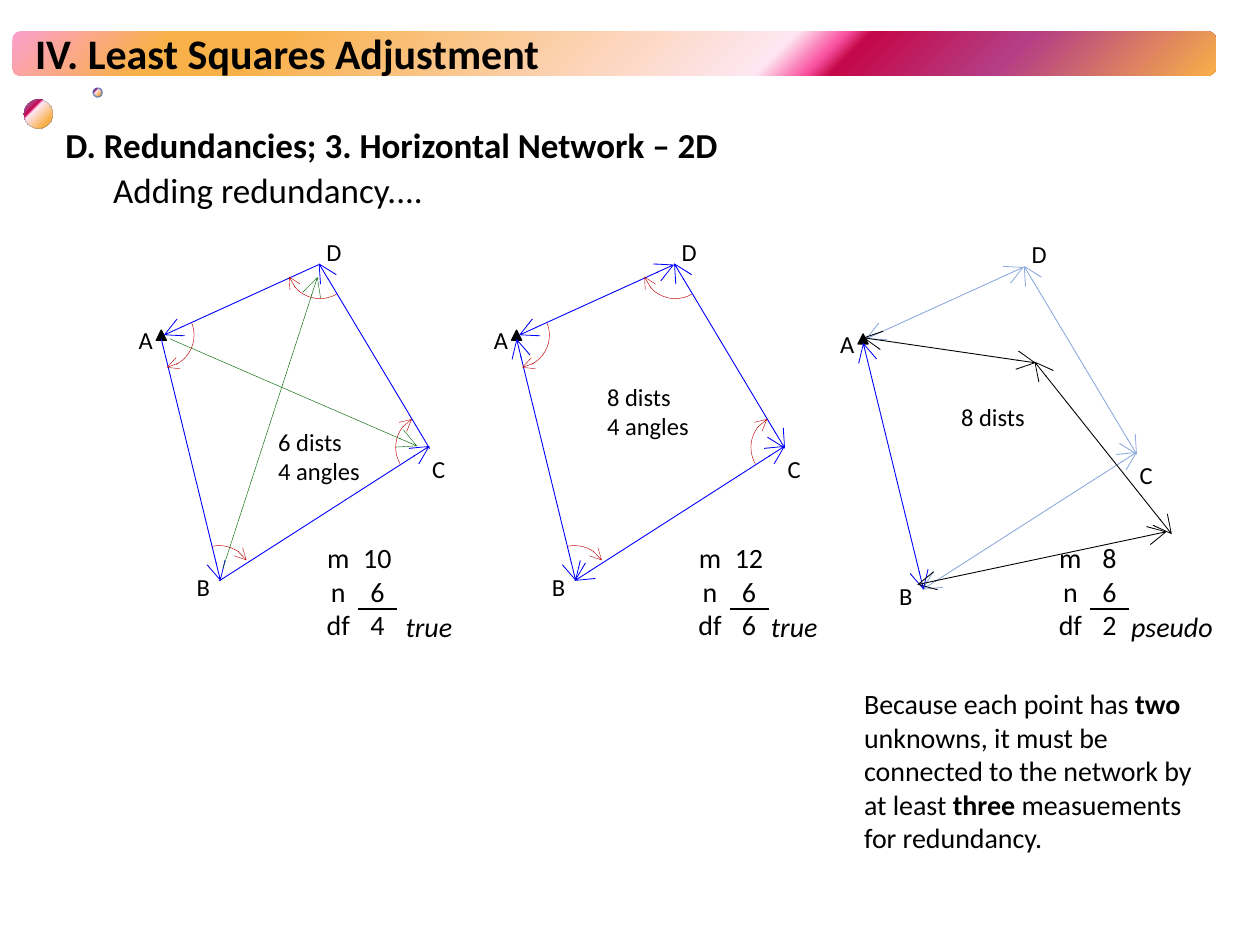
from lxml.etree import SubElement
from pptx import Presentation
from pptx.dml.color import RGBColor
from pptx.enum.shapes import MSO_CONNECTOR, MSO_SHAPE
from pptx.enum.text import MSO_ANCHOR, MSO_AUTO_SIZE, PP_ALIGN
from pptx.oxml import parse_xml
from pptx.oxml.ns import nsdecls, qn
from pptx.util import Inches, Pt

COLS, ROWS = 100, 75
WIDTH, HEIGHT = Inches(10), Inches(7.5)
COLORS = {
    "ink": "000000", "side": "0000FF", "faded": "8FAADC", "angle": "C00000",
    "diagonal": "006600", "rim": "3B6BC1",
}
STOPS = [(0, "FC9FCB"), (13, "F8B049"), (21, "F8B049"), (63, "FEE7F2"),
         (67, "F952A0"), (69, "C50849"), (82, "B43E85"), (100, "F8B049")]
LINEAR = '<a:lin ang="2700000" scaled="0"/>'
RADIAL = '<a:path path="circle"><a:fillToRect l="100000" t="100000"/></a:path>'
NO_STYLE = "{2D5ABB26-0587-4C30-8999-92F81FD0307C}"
BODY = {"line_spacing": 0.9, "space_before": Pt(7.5)}
SUB = {"line_spacing": 0.9, "space_before": Pt(3.8), "level": 1}
TIGHT = {f"margin_{side}": 0 for side in ("left", "top", "right", "bottom")}

SIDES = [(0.6, 0.4, 12.9, -5.2), (12.9, -5.3, 21.7, 9.4),
         (21.7, 9.2, 5, 19.9), (5.1, 19.9, 0.4, 0.7)]
DIAGONALS = [(1.1, 0.7, 20.7, 9.2), (5.3, 18.9, 12.8, -4.2)]
SHIFTED = [(68.5, 26.8, 82.2, 28.8), (82.1, 28.7, 93, 42.4), (92.6, 42.2, 72.8, 46.4)]
LABELS = [("A", -1.4, -0.4), ("B", 3.2, 19.2), ("D", 13.5, -7.4), ("C", 21.9, 9.8)]
ANGLES = [(19, 6.7, 150.07, 239.79), (10.4, -7.7, 59.74, 160.79),
          (2.4, 17.1, 257.65, 326.56), (-2.2, -2.2, 338.37, 80.17)]


def grid(*cells):
    """Turn alternating column and row counts into slide lengths."""
    steps = (WIDTH / COLS, HEIGHT / ROWS)
    return [round(n * steps[i % 2]) for i, n in enumerate(cells)]


def rgb(name):
    """Look up a named colour."""
    return RGBColor.from_string(COLORS[name])


def apply(obj, values):
    """Set each attribute from a dict of format values."""
    for name, value in values.items():
        setattr(obj, name, value)


def add_run(p, text, size, **fmt):
    """Add a run of text with its font."""
    r = p.add_run()
    r.text = text
    apply(r.font, {"name": "Calibri", "size": Pt(size), **fmt})
    r.font.color.rgb = rgb("ink")


def add_text(shapes, at, paragraphs, size, wrap=False, frame=None):
    """Add a text box; a paragraph is its format and a list of runs."""
    tf = shapes.add_textbox(*grid(*at)).text_frame
    apply(tf, {"word_wrap": wrap, "auto_size": MSO_AUTO_SIZE.SHAPE_TO_FIT_TEXT,
               **(frame or {})})
    for i, (fmt, runs) in enumerate(paragraphs):
        p = tf.add_paragraph() if i else tf.paragraphs[0]
        apply(p, fmt)
        for text, font in runs:
            add_run(p, text, size, **font)
    return tf


def add_gradient(shapes, kind, at, shade, rim=0):
    """Add a banner or bullet with the theme gradient."""
    sp = shapes.add_shape(kind, *grid(*at))
    sp.shadow.inherit = False
    stops = "".join(f'<a:gs pos="{pos * 1000}"><a:srgbClr val="{color}"/></a:gs>'
                    for pos, color in STOPS)
    fill = parse_xml(f'<a:gradFill {nsdecls("a")} rotWithShape="1">'
                     f'<a:gsLst>{stops}</a:gsLst>{shade}</a:gradFill>')
    sp._element.spPr.find(qn("a:prstGeom")).addnext(fill)
    if not rim:
        sp.line.fill.background()
        return
    sp.line.color.rgb, sp.line.width = rgb("rim"), Pt(rim)
    color = sp.line._ln.find(".//" + qn("a:srgbClr"))
    SubElement(color, qn("a:alpha"), val="60000")


def set_line(sp, color, width, ends, size="med"):
    """Style a line and put open arrowheads on the given ends."""
    sp.line.color.rgb, sp.line.width = rgb(color), Pt(width)
    for end in ends:
        SubElement(sp.line._ln, qn(f"a:{end}End"), type="arrow", w=size, len=size)


def add_arrow(shapes, points, color, width=0.5, ends=("head", "tail")):
    """Add a straight arrow."""
    sp = shapes.add_connector(MSO_CONNECTOR.STRAIGHT, *grid(*points))
    set_line(sp, color, width, ends, "lg")
    SubElement(sp._element.spPr, qn("a:effectLst"))


def add_angle(shapes, at, start, stop):
    """Add an angle arc between two bearings in degrees."""
    sp = shapes.add_shape(MSO_SHAPE.ARC, *grid(*at))
    sp.shadow.inherit = False
    sp.fill.background()
    sp.adjustments[0], sp.adjustments[1] = start * 0.6, stop * 0.6
    set_line(sp, "angle", 0.25, ["tail"])


def add_network(s, left, top, scale=1, colors=("side",) * 4,
                ends=("head", "tail"), angles=ANGLES, diagonals=()):
    """Add a four-point network placed by its control point A."""
    def place(*cells):
        return [(left, top)[i % 2] + n * scale for i, n in enumerate(cells)]

    shapes = s.shapes.add_group_shape().shapes
    sp = shapes.add_shape(MSO_SHAPE.ISOSCELES_TRIANGLE, *grid(left, top, 0.8, 0.8))
    sp.shadow.inherit = False
    sp.fill.solid()
    sp.fill.fore_color.rgb = sp.line.color.rgb = rgb("ink")
    sp.line.width = 0
    for points, color in zip(SIDES, colors):
        add_arrow(shapes, place(*points), color, ends=ends)
    for name, x, y in LABELS:
        add_text(shapes, [*place(x, y), 1.1, 2.4], [({}, [(name, {})])], 14, frame=TIGHT)
    for x, y, start, stop in angles:
        add_angle(shapes, [*place(x, y), 5.2, 5.2], start, stop)
    for points in diagonals:
        add_arrow(shapes, place(*points), "diagonal", 0.25, ["tail"])


def add_count(s, left, m, n, kind, kind_left, kind_width=5.9):
    """Add the table of degrees of freedom and its verdict."""
    top, width, height = 43, 6.2, 8
    table = s.shapes.add_table(3, 2, *grid(left, top, width, height)).table
    apply(table, {"first_row": False, "horz_banding": False})
    table._tbl.tblPr.find(qn("a:tableStyleId")).text = NO_STYLE
    for i, row in enumerate([("m", m), ("n", n), ("df", m - n)]):
        for j, value in enumerate(row):
            cell = table.cell(i, j)
            apply(cell, {**TIGHT, "vertical_anchor": MSO_ANCHOR.TOP})
            cell.fill.background()
            p = cell.text_frame.paragraphs[0]
            p.alignment = PP_ALIGN.CENTER
            add_run(p, str(value), 16)
    for i, edge in ((1, "lnB"), (2, "lnT")):
        border = parse_xml(f'<a:{edge} {nsdecls("a")} w="12700"><a:solidFill>'
                           f'<a:srgbClr val="{COLORS["ink"]}"/></a:solidFill></a:{edge}>')
        table.cell(i, 1)._tc.get_or_add_tcPr().insert(0, border)
    add_text(s.shapes, (kind_left, 47.9, kind_width, 3.7),
             [({}, [(kind, {"italic": True})])], 16)


def main():
    """Build the slide."""
    prs = Presentation()
    apply(prs, {"slide_width": WIDTH, "slide_height": HEIGHT})
    s = prs.slides.add_slide(prs.slide_layouts[6])
    bold = {"bold": True}

    add_gradient(s.shapes, MSO_SHAPE.ROUNDED_RECTANGLE, (1, 2.5, 95.5, 3.5), LINEAR)
    add_text(s.shapes, (1.8, 1.7, 72.9, 5),
             [({}, [("IV. Least Squares Adjustment", bold)])], 24, True)
    add_gradient(s.shapes, MSO_SHAPE.OVAL, (1.9, 7.9, 2.3, 2.3), RADIAL, 0.16)
    add_gradient(s.shapes, MSO_SHAPE.OVAL, (7.4, 7, 0.7, 0.7), RADIAL, 1)
    tf = add_text(s.shapes, (4.2, 9.7, 86.2, 58.6), [
        (BODY, [("D. Redundancies; 3. Horizontal Network – 2D", bold)]),
        (SUB, [("Adding redundancy....", {})]),
    ], 20, True, {"auto_size": MSO_AUTO_SIZE.NONE})
    tf.paragraphs[1]._p.get_or_add_pPr().set("marL", str(Inches(0.38)))
    add_text(s.shapes, (67.6, 54, 30, 14.5), [({}, [
        ("Because each point has ", {}), ("two", bold),
        (" unknowns, it must be connected to the network by at least ", {}),
        ("three", bold), (" measuements for redundancy.", {}),
    ])], 16, True)

    add_network(s, 40.6, 26.2)
    add_network(s, 12.4, 26.2, ends=["head"], diagonals=DIAGONALS)
    add_network(s, 68.1, 26.5, 1.02, ["faded"] * 3 + ["side"], angles=())

    add_count(s, 25.3, 10, 6, "true", 31.2)
    add_count(s, 54.8, 12, 6, "true", 60.2)
    add_count(s, 83.4, 8, 6, "pseudo", 88.8, 8.7)

    for left, top, width, lines in ((21.1, 33.4, 8.6, ["6 dists", "4 angles"]),
                                    (47.2, 29.8, 8.6, ["8 dists", "4 angles"]),
                                    (75.3, 31.4, 7.1, ["8 dists"])):
        add_text(s.shapes, (left, top, width, 1.1 + 2.3 * len(lines)),
                 [({}, [(line, {})]) for line in lines], 14)

    shapes = s.shapes.add_group_shape().shapes
    for points in SHIFTED:
        add_arrow(shapes, points, "ink")
    prs.save("out.pptx")


if __name__ == "__main__":
    main()
